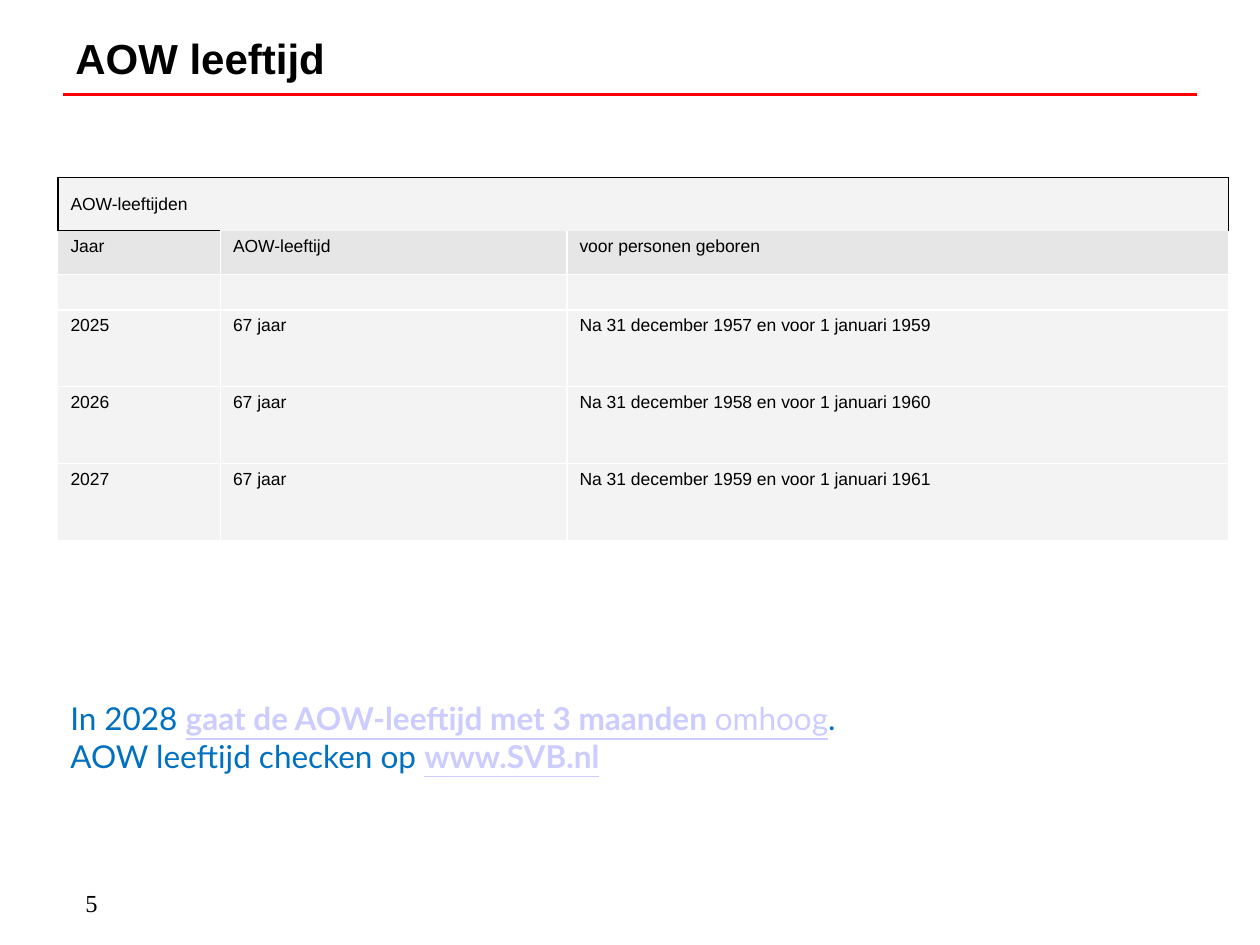
import pptx
import pptx.util
import pptx.dml.color
import pptx.enum.shapes
import pptx.enum.text
import pptx.oxml
import pptx.oxml.ns
from lxml import etree

TITLE = "AOW leeftijd"
ROWS = [
    ("AOW-leeftijden", "", ""),
    ("Jaar", "AOW-leeftijd", "voor personen geboren"),
    ("", "", ""),
    ("2025", "67 jaar", "Na 31 december 1957 en voor 1 januari 1959"),
    ("2026", "67 jaar", "Na 31 december 1958 en voor 1 januari 1960"),
    ("2027", "67 jaar", "Na 31 december 1959 en voor 1 januari 1961"),
]
NOTE = [
    [("In 2028\u00a0", "note"),
     ("gaat de AOW-leeftijd met 3 maanden ", "strong_link"),
     ("omhoog", "link"), (".", "note")],
    [("AOW leeftijd checken op ", "note"), ("www.SVB.nl", "strong_link")],
]
PAGE = "5"

THEME = {
    "rule": "FF0000", "band": "F3F3F3", "header": "E6E6E6",
    "grid": "FFFFFF", "frame": "000000",
    "title": ("Arial", 24, "000000", True, False),
    "cell": ("Arial", 10, "000000", False, False),
    "page": ("Times New Roman", 14, "000000", False, False),
    "note": ("Lato", 18, "0070C0", False, False),
    "link": ("Lato", 18, "CCCCFF", False, True),
    "strong_link": ("Lato", 18, "CCCCFF", True, True),
}
W, H = 10, 7.5
MARGIN = 0.05 * W
TABLE_LEFT, TABLE_TOP = 0.46, 1.41
COLS = [1.29, 2.75, 5.25]
HEIGHTS = [0.42, 0.35, 0.28] + [0.61] * 3

inch = pptx.util.Inches
rgb = pptx.dml.color.RGBColor.from_string


def style(r, name):
    f = r.font
    f.name, size, color, f.bold, f.underline = THEME[name]
    f.size = pptx.util.Pt(size)
    f.color.rgb = rgb(color)


def add_text(s, box, paragraphs, anchor=pptx.enum.text.MSO_ANCHOR.TOP):
    tf = s.shapes.add_textbox(*map(inch, box)).text_frame
    tf.word_wrap = True
    tf.vertical_anchor = anchor
    for i, runs in enumerate(paragraphs):
        p = tf.paragraphs[0] if i == 0 else tf.add_paragraph()
        for text, name in runs:
            r = p.add_run()
            r.text = text
            style(r, name)


def set_borders(cell, colors):
    tcPr = cell._tc.get_or_add_tcPr()
    for i, (side, color) in enumerate(zip("LRTB", colors)):
        fill = (f'<a:solidFill><a:srgbClr val="{color}"/></a:solidFill>'
                if color else "<a:noFill/>")
        tcPr.insert(i, pptx.oxml.parse_xml(
            f'<a:ln{side} {pptx.oxml.ns.nsdecls("a")} w="12700">{fill}</a:ln{side}>'))


def borders(i, j):
    last = len(COLS) - 1
    frame, grid = THEME["frame"], THEME["grid"]
    if i == 0:
        return (None if j else frame, None if 0 < j < last else frame,
                frame, None if j else frame)
    top = grid if i > 1 else (None if j else frame)
    return grid if j else None, grid if j < last else None, top, grid


def add_table(s):
    frame = s.shapes.add_table(
        len(ROWS), len(COLS), inch(TABLE_LEFT), inch(TABLE_TOP),
        inch(sum(COLS)), inch(sum(HEIGHTS)))
    table = frame.table
    for col, width in zip(table.columns, COLS):
        col.width = inch(width)
    for row, height in zip(table.rows, HEIGHTS):
        row.height = inch(height)
    table.cell(0, 0).merge(table.cell(0, len(COLS) - 1))
    for i, texts in enumerate(ROWS):
        for j, text in enumerate(texts):
            cell = table.cell(i, j)
            p = cell.text_frame.paragraphs[0]
            p.text = text
            for r in p.runs:
                style(r, "cell")
            if not text:
                end = etree.SubElement(p._p, pptx.oxml.ns.qn("a:endParaRPr"))
                end.set("sz", str(THEME["cell"][1] * 100))
            set_borders(cell, borders(i, j))
            cell.fill.solid()
            cell.fill.fore_color.rgb = rgb(THEME["header" if i == 1 else "band"])
    table.cell(0, 0).vertical_anchor = pptx.enum.text.MSO_ANCHOR.MIDDLE


def add_rule(s):
    line = s.shapes.add_connector(
        pptx.enum.shapes.MSO_CONNECTOR.STRAIGHT,
        inch(MARGIN), inch(0.1 * H), inch(W - MARGIN), inch(0.1 * H))
    line.line.color.rgb = rgb(THEME["rule"])
    line.line.width = pptx.util.Pt(2)
    etree.SubElement(line._element.spPr, pptx.oxml.ns.qn("a:effectLst"))


def main():
    prs = pptx.Presentation()
    prs.slide_width, prs.slide_height = inch(W), inch(H)
    s = prs.slides.add_slide(prs.slide_layouts[6])
    add_rule(s)
    add_text(s, (MARGIN, 0, 7.17, 0.92), [[(TITLE, "title")]],
             pptx.enum.text.MSO_ANCHOR.MIDDLE)
    add_table(s)
    add_text(s, (0.58, 7, 2.08, 0.33), [[(PAGE, "page")]])
    add_text(s, (TABLE_LEFT, 5.5, W - MARGIN - TABLE_LEFT, 1.01), NOTE)
    prs.save("out.pptx")


if __name__ == "__main__":
    main()
